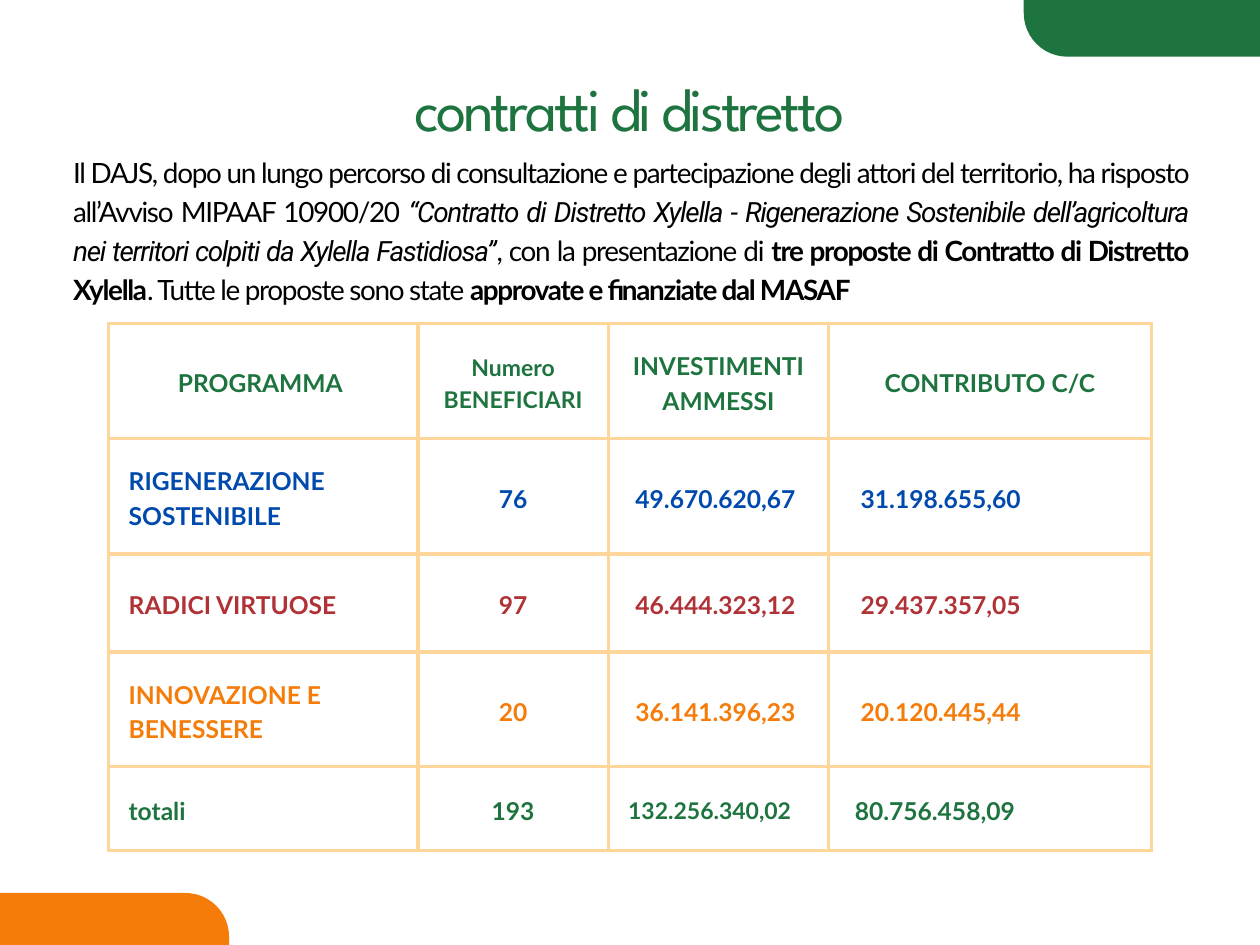
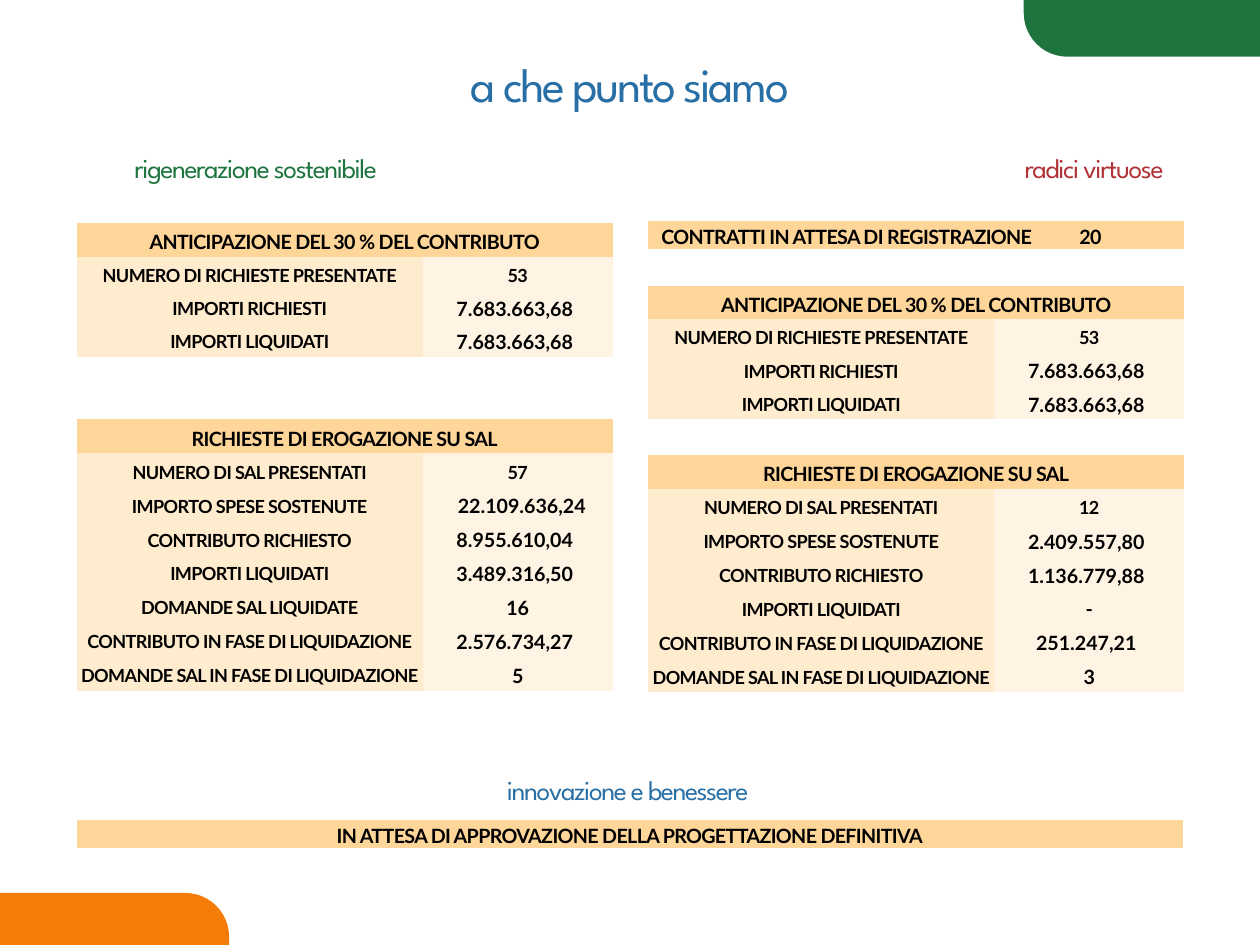
from pptx import Presentation
from pptx.dml.color import RGBColor
from pptx.enum.shapes import MSO_SHAPE
from pptx.enum.text import MSO_ANCHOR, MSO_AUTO_SIZE, PP_ALIGN
from pptx.oxml.ns import qn
from pptx.util import Inches, Pt
from lxml import etree

# Shared look
GREEN, ORANGE, BLUE, RED, SKY = "1E743F", "F57C09", "004AAD", "B03237", "286FA6"
SAND, SAND_MID, SAND_LIGHT, BLACK = "FFD699", "FFEBCD", "FFF4E3", "000000"
TEXT_FONT, DISPLAY_FONT = "Lato", "League Spartan"
LEFT, CENTER, JUSTIFY = PP_ALIGN.LEFT, PP_ALIGN.CENTER, PP_ALIGN.JUSTIFY
NO_STYLE = "{2D5ABB26-0587-4C30-8999-92F81FD0307C}"


def rgb(code):
    return RGBColor.from_string(code)


def write(frame, text, size=12, color=BLACK, font=TEXT_FONT, bold=False, italic=False,
          spacing=0, align=CENTER, leading=None, tab=None):
    """Write text, or a list of (text, format changes), as one paragraph."""
    frame.word_wrap = True
    paragraph = frame.paragraphs[0]
    paragraph.alignment = align
    paragraph.line_spacing = Pt(leading or round(size * 1.4, 1))
    if tab:
        stops = etree.SubElement(paragraph._p.get_or_add_pPr(), qn("a:tabLst"))
        etree.SubElement(stops, qn("a:tab"), pos=str(Inches(tab)), algn="l")
    pieces = [(text, {})] if isinstance(text, str) else text
    for piece, changes in pieces:
        if not piece:
            continue
        style = dict(font=font, bold=bold, italic=italic) | changes
        run = paragraph.add_run()
        run.text = piece
        run.font.size = Pt(size)
        run.font.name = style["font"]
        run.font.bold = style["bold"]
        run.font.italic = style["italic"]
        run.font.color.rgb = rgb(color)
        run.font._element.set("spc", str(round(spacing * 100)))


def fit_frame(shape):
    frame = shape.text_frame
    frame.margin_left = frame.margin_right = frame.margin_top = frame.margin_bottom = 0
    frame.vertical_anchor = MSO_ANCHOR.TOP
    frame.auto_size = MSO_AUTO_SIZE.SHAPE_TO_FIT_TEXT
    return frame


def add_text(slide, box, text, **style):
    shape = slide.shapes.add_textbox(*map(Inches, box))
    write(fit_frame(shape), text, **style)


def add_title(slide, box, text, **style):
    title = slide.shapes.title
    title.left, title.top, title.width, title.height = map(Inches, box)
    write(fit_frame(title), text, font=DISPLAY_FONT, **style)


def add_corners(slide):
    side, radius = 2.4, 0.37
    for left, top, color in ((8.67, -1.92, GREEN), (-0.46, 7.56, ORANGE)):
        corner = slide.shapes.add_shape(MSO_SHAPE.ROUNDED_RECTANGLE, Inches(left),
                                        Inches(top), Inches(side), Inches(side))
        corner.adjustments[0] = radius / side
        corner.shadow.inherit = False
        corner.fill.solid()
        corner.fill.fore_color.rgb = rgb(color)
        corner.line.fill.background()


# Tables
def add_grid(slide, left, top, widths, heights):
    grid = slide.shapes.add_table(len(heights), len(widths), Inches(left), Inches(top),
                                  Inches(sum(widths)), Inches(sum(heights))).table
    grid.first_row = grid.horz_banding = False
    grid._tbl.tblPr.find(qn("a:tableStyleId")).text = NO_STYLE
    for column, width in zip(grid.columns, widths):
        column.width = Inches(width)
    for row, height in zip(grid.rows, heights):
        row.height = Inches(height)
    return grid


def fill_cell(cell, text, fill=None, margin=0, indent=0, tail=0, **style):
    cell.margin_left = Inches(margin + indent)
    cell.margin_right = Inches(margin + tail)
    cell.margin_top = cell.margin_bottom = Inches(margin)
    cell.vertical_anchor = MSO_ANCHOR.MIDDLE
    if fill:
        cell.fill.solid()
        cell.fill.fore_color.rgb = rgb(fill)
    else:
        cell.fill.background()
    write(cell.text_frame, text, bold=True, **style)


def border_cell(cell, color, width):
    properties = cell._tc.get_or_add_tcPr()
    for position, side in enumerate(("lnL", "lnR", "lnT", "lnB")):
        line = etree.Element(qn(f"a:{side}"), w=str(Pt(width)))
        paint = etree.SubElement(line, qn("a:solidFill"))
        etree.SubElement(paint, qn("a:srgbClr"), val=color)
        properties.insert(position, line)


def add_programme_table(slide, left, top):
    headings = ["PROGRAMMA", "Numero BENEFICIARI", "INVESTIMENTI AMMESSI", "CONTRIBUTO C/C"]
    programmes = [
        (BLUE, "RIGENERAZIONE SOSTENIBILE", "76", "49.670.620,67", "31.198.655,60"),
        (RED, "RADICI VIRTUOSE", "97", "46.444.323,12", "29.437.357,05"),
        (ORANGE, "INNOVAZIONE E BENESSERE", "20", "36.141.396,23", "20.120.445,44"),
        (GREEN, "totali", "193", "132.256.340,02", "80.756.458,09"),
    ]
    total = "132.256.340,02"
    smaller = ("Numero BENEFICIARI", total)
    grid = add_grid(slide, left, top, [2.62, 1.61, 1.87, 2.73], [0.97, 0.98, 0.83, 0.97, 0.71])
    for r, (color, *texts) in enumerate([(GREEN, *headings), *programmes]):
        for c, text in enumerate(texts):
            cell = grid.cell(r, c)
            centred = (r == 0 or c in (1, 2)) and text != total
            indent = tail = 0
            if r and c == 3:
                indent = 0.05 if r == 4 else 0.1
            elif text == "PROGRAMMA" or (r and c == 2):
                tail = 0.05
            fill_cell(cell, text, margin=0.17, indent=indent, tail=tail, color=color,
                      align=CENTER if centred else LEFT, size=14 if text in smaller else 15)
            border_cell(cell, SAND, 2.25)


HEADER_STYLE = dict(fill=SAND, spacing=-0.4, leading=17)
LABEL_STYLE = dict(size=11, spacing=-0.4, leading=15.6)
PANEL_WIDTHS = [1.62, 1.31, 1.61]


def add_panel(slide, left, top, height, heading, entries):
    count = len(entries) + 1
    grid = add_grid(slide, left, top, PANEL_WIDTHS, [height / count] * count)
    fill_merged_row(grid, heading)
    for r, (label, value) in enumerate(entries, 1):
        grid.cell(r, 0).merge(grid.cell(r, 1))
        fill_cell(grid.cell(r, 0), label, SAND_MID, **LABEL_STYLE)
        fill_cell(grid.cell(r, 1), "", SAND_MID, **LABEL_STYLE)
        value_style = dict(size=12)
        if r == 1:
            value_style = LABEL_STYLE
        elif value.startswith("22."):
            value_style["indent"] = 0.07
        elif "," in value:
            value_style["tail"] = 0.05
        fill_cell(grid.cell(r, 2), value, SAND_LIGHT, **value_style)


def fill_merged_row(grid, text, **style):
    grid.cell(0, 0).merge(grid.cell(0, 2))
    for c, part in enumerate((text, "", "")):
        fill_cell(grid.cell(0, c), part, **HEADER_STYLE, **style)


def add_bar(slide, left, top, widths, text, **style):
    fill_merged_row(add_grid(slide, left, top, widths, [0.24]), text, **style)


def add_advance_panel(slide, left, top):
    add_panel(slide, left, top, 1.13, "ANTICIPAZIONE DEL 30 % DEL CONTRIBUTO", [
        ("NUMERO DI RICHIESTE PRESENTATE", "53"),
        ("IMPORTI RICHIESTI", "7.683.663,68"),
        ("IMPORTI LIQUIDATI", "7.683.663,68"),
    ])


def add_payment_panel(slide, left, top, height, amounts):
    labels = ["NUMERO DI SAL PRESENTATI", "IMPORTO SPESE SOSTENUTE", "CONTRIBUTO RICHIESTO",
              "IMPORTI LIQUIDATI", "DOMANDE SAL LIQUIDATE",
              "CONTRIBUTO IN FASE DI LIQUIDAZIONE", "DOMANDE SAL IN FASE DI LIQUIDAZIONE"]
    entries = [(label, amount) for label, amount in zip(labels, amounts) if amount]
    add_panel(slide, left, top, height, "RICHIESTE DI EROGAZIONE SU SAL", entries)


# Slides
def build_contracts(slide):
    add_programme_table(slide, 0.92, 2.74)
    add_text(slide, (0.62, 1.27, 9.44, 1.28), [
        ("Il DAJS, dopo un lungo percorso di consultazione e partecipazione degli attori del "
         "territorio, ha risposto all’Avviso MIPAAF 10900/20 ", {}),
        ("“Contratto di Distretto Xylella - Rigenerazione Sostenibile dell’agricoltura nei "
         "territori colpiti da Xylella Fastidiosa”", dict(font="Roboto", italic=True)),
        (", con la presentazione di", {}),
        (" tre proposte di Contratto di Distretto Xylella", dict(bold=True)),
        (". Tutte le proposte sono state ", {}),
        ("approvate e finanziate dal MASAF", dict(bold=True)),
    ], size=17, spacing=-0.83, align=JUSTIFY)
    add_title(slide, (2.93, 0.5, 4.8, 0.69), "contratti di distretto",
              size=37, color=GREEN, spacing=-1.85)
    add_corners(slide)


def build_progress(slide):
    left, right = 0.65, 5.49
    add_title(slide, (3.6, 0.38, 3.47, 0.54), "a che punto siamo",
              size=29.1, color=SKY, spacing=-1.45)
    for x, y, name, color in ((left, 1.23, "rigenerazione sostenibile", GREEN),
                              (7.75, 1.23, "radici virtuose", RED),
                              (3.8, 6.5, "innovazione e benessere", SKY)):
        add_text(slide, (x, y, 3.03, 0.31), name, size=16.7, color=color,
                 font=DISPLAY_FONT, spacing=-0.83)
    add_advance_panel(slide, left, 1.89)
    add_payment_panel(slide, left, 3.55, 2.3, ["57", "22.109.636,24", "8.955.610,04",
                                               "3.489.316,50", "16", "2.576.734,27", "5"])
    add_bar(slide, right, 1.87, PANEL_WIDTHS, "CONTRATTI IN ATTESA DI REGISTRAZIONE\t20",
            indent=0.11, tab=3.54, align=LEFT)
    add_advance_panel(slide, right, 2.42)
    add_payment_panel(slide, right, 3.85, 2.01, ["12", "2.409.557,80", "1.136.779,88",
                                                 "-", None, "251.247,21", "3"])
    add_bar(slide, left, 6.94, [3.23, 2.92, 3.22],
            "IN ATTESA DI APPROVAZIONE DELLA PROGETTAZIONE DEFINITIVA")
    add_corners(slide)


def main():
    deck = Presentation()
    deck.slide_width, deck.slide_height = Inches(10.67), Inches(8)
    title_only = deck.slide_layouts[5]
    for build in (build_contracts, build_progress):
        build(deck.slides.add_slide(title_only))
    deck.save("out.pptx")


if __name__ == "__main__":
    main()
